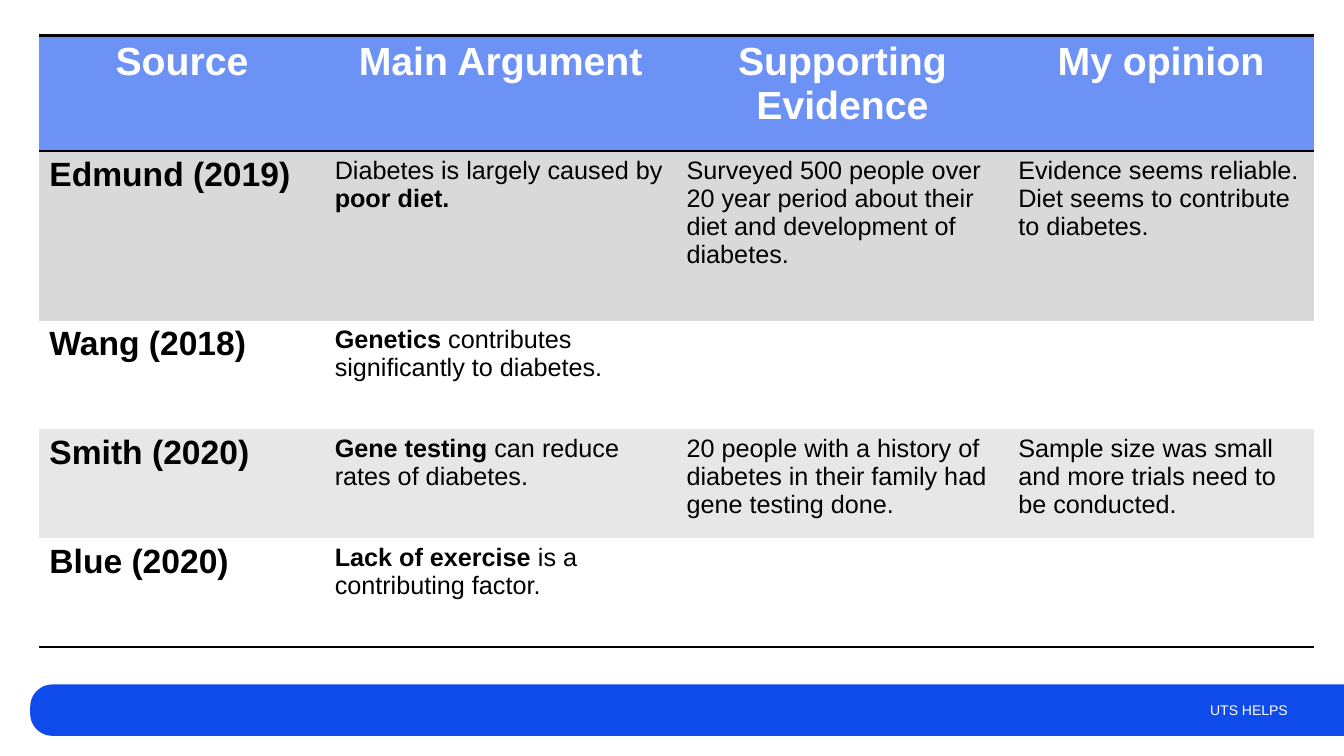
"""Build a slide with a table comparing sources on the causes of diabetes."""
from lxml import etree
from pptx import Presentation
from pptx.dml.color import RGBColor
from pptx.enum.shapes import MSO_SHAPE
from pptx.enum.text import MSO_ANCHOR, PP_ALIGN
from pptx.oxml.ns import qn
from pptx.util import Inches, Pt

BAR = MSO_SHAPE.ROUND_2_SAME_RECTANGLE
MIDDLE = MSO_ANCHOR.MIDDLE
CENTER, LEFT, RIGHT = PP_ALIGN.CENTER, PP_ALIGN.LEFT, PP_ALIGN.RIGHT
NO_GRID = "{2D5ABB26-0587-4C30-8999-92F81FD0307C}"
WIDTHS = [2.83, 3.49, 3.29, 3.03]
HEIGHTS = [1.15, 1.68, 1.08, 1.08, 1.08]
FILLS = ["6C92F6", "D9D9D9", "FFFFFF", "E7E7E7", "FFFFFF"]
RULES = {0: ["lnT", "lnB"], 4: ["lnB"]}
ROWS = [
    ["*Source", "*Main Argument", "*Supporting Evidence", "*My opinion"],
    ["*Edmund (2019)", "Diabetes is largely caused by *poor diet.\u00a0",
     "Surveyed 500 people over 20 year period about their diet and development of diabetes.",
     "Evidence seems reliable. Diet seems to contribute to diabetes."],
    ["*Wang (2018)", "*Genetics* contributes significantly to diabetes.", "", ""],
    ["*Smith (2020)", "*Gene testing *can reduce rates of diabetes.",
     "20 people with a history of diabetes in their family had gene testing done.",
     "Sample size was small and more trials need to be conducted."],
    ["*Blue (2020)", "*Lack of exercise *is a contributing factor.", "", ""],
]


def color(code):
    return RGBColor.from_string(code)


def style(font, size, code, bold=False):
    font.name = "Arial"
    font.size = Pt(size)
    font.bold = bold
    font.color.rgb = color(code)


deck = Presentation()
deck.slide_width = Inches(13.33)
deck.slide_height = Inches(7.5)
slide = deck.slides.add_slide(deck.slide_layouts[6])

bar = slide.shapes.add_shape(BAR, Inches(6.56), Inches(0.53), Inches(0.51), Inches(13.03))
bar.rotation = 270
bar.adjustments[0] = 0.433
bar.adjustments[1] = 0
bar.shadow.inherit = False
bar.fill.solid()
bar.fill.fore_color.rgb = color("0F4BEB")
bar.line.fill.background()

footer = slide.shapes.add_textbox(Inches(6.96), Inches(6.84), Inches(5.91), Inches(0.4))
frame = footer.text_frame
frame.word_wrap = True
frame.vertical_anchor = MIDDLE
frame.text = "UTS HELPS"
frame.paragraphs[0].alignment = RIGHT
style(frame.paragraphs[0].runs[0].font, 10, "FFFFFF")

table = slide.shapes.add_table(len(ROWS), len(WIDTHS), Inches(0.39), Inches(0.35),
                               Inches(sum(WIDTHS)), Inches(sum(HEIGHTS))).table
table._tbl.tblPr.find(qn("a:tableStyleId")).text = NO_GRID
table.horz_banding = False
for column, width in zip(table.columns, WIDTHS):
    column.width = Inches(width)

for i, texts in enumerate(ROWS):
    table.rows[i].height = Inches(HEIGHTS[i])
    for j, text in enumerate(texts):
        cell = table.cell(i, j)
        props = cell._tc.get_or_add_tcPr()
        for side in RULES.get(i, []):
            line = etree.SubElement(props, qn("a:" + side), w=str(Pt(2)))
            paint = etree.SubElement(line, qn("a:solidFill"))
            etree.SubElement(paint, qn("a:srgbClr"), val="000000")
        cell.fill.solid()
        cell.fill.fore_color.rgb = color(FILLS[i])
        para = cell.text_frame.paragraphs[0]
        para.alignment = CENTER if i == 0 else LEFT
        size = 28 if i == 0 else 24 if j == 0 else 18
        for k, part in enumerate(text.split("*")):
            if part:
                run = para.add_run()
                run.text = part
                style(run.font, size, "FFFFFF" if i == 0 else "000000", k % 2 == 1)

deck.save("out.pptx")
